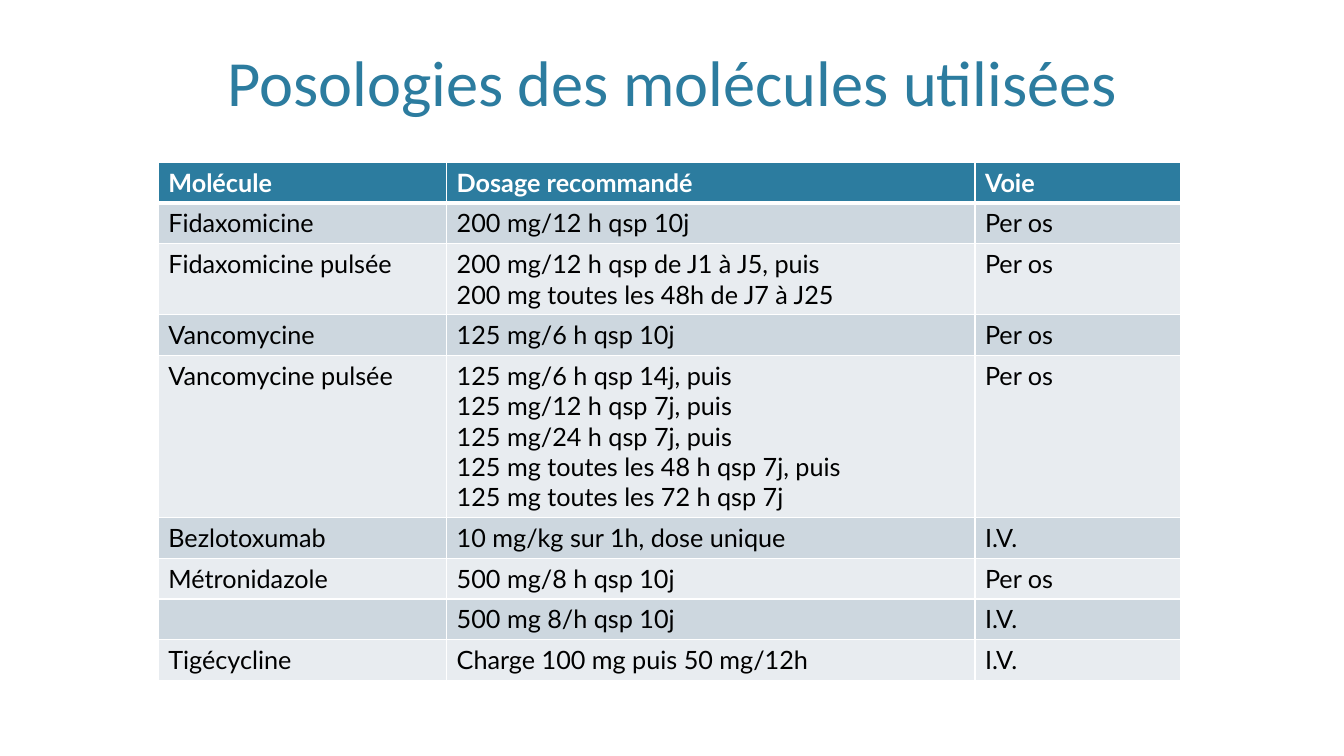
from lxml import etree
from pptx import Presentation
from pptx.dml.color import RGBColor
from pptx.enum.text import MSO_ANCHOR, PP_ALIGN
from pptx.oxml.ns import qn
from pptx.util import Inches, Pt

CENTER = PP_ALIGN.CENTER
BOTTOM = MSO_ANCHOR.BOTTOM
BLUE = "2C7C9F"
WHITE = "FFFFFF"
BANDS = ["E8ECF0", "CDD7DF"]


def color(value):
    return RGBColor.from_string(value)


def set_borders(cell, top, bottom):
    properties = cell._tc.get_or_add_tcPr()
    widths = {"a:lnL": 1, "a:lnR": 1, "a:lnT": top, "a:lnB": bottom}
    for position, (tag, width) in enumerate(widths.items()):
        line = etree.Element(qn(tag), w=str(Pt(width)))
        fill = etree.SubElement(line, qn("a:solidFill"))
        etree.SubElement(fill, qn("a:srgbClr"), val=WHITE)
        properties.insert(position, line)


rows = [
    ("Molécule", "Dosage recommandé", "Voie"),
    ("Fidaxomicine", "200 mg/12 h qsp 10j", "Per os"),
    ("Fidaxomicine pulsée",
     "200 mg/12 h qsp de J1 à J5, puis\n200 mg toutes les 48h de J7 à J25", "Per os"),
    ("Vancomycine", "125 mg/6 h qsp 10j", "Per os"),
    ("Vancomycine pulsée",
     "125 mg/6 h qsp 14j, puis\n125 mg/12 h qsp 7j, puis\n125 mg/24 h qsp 7j, puis\n"
     "125 mg toutes les 48 h qsp 7j, puis\n125 mg toutes les 72 h qsp 7j", "Per os"),
    ("Bezlotoxumab", "10 mg/kg sur 1h, dose unique", "I.V."),
    ("Métronidazole", "500 mg/8 h qsp 10j", "Per os"),
    ("", "500 mg 8/h qsp 10j", "I.V."),
    ("Tigécycline", "Charge 100 mg puis 50 mg/12h", "I.V."),
]

deck = Presentation()
deck.slide_width = Inches(13.33)
deck.slide_height = Inches(7.5)
page = deck.slides.add_slide(deck.slide_layouts[6])

title = page.shapes.add_textbox(Inches(0.8), Inches(0.12), Inches(11.73), Inches(1.11))
title.text_frame.word_wrap = True
title.text_frame.vertical_anchor = BOTTOM
para = title.text_frame.paragraphs[0]
para.alignment = CENTER
span = para.add_run()
span.text = "Posologies des molécules utilisées"
span.font.name = "Calibri"
span.font.size = Pt(46)
span.font.color.rgb = color(BLUE)

table = page.shapes.add_table(
    len(rows), 3, Inches(1.57), Inches(1.61), Inches(10.14), Inches(5.14)).table
for column, width in zip(table.columns, [2.86, 5.24, 2.04]):
    column.width = Inches(width)

for row_index, row in enumerate(rows):
    header = row_index == 0
    line_count = max(len(text.split("\n")) for text in row)
    table.rows[row_index].height = Inches(0.105 + 0.3 * line_count)
    for column_index, text in enumerate(row):
        cell = table.cell(row_index, column_index)
        cell.fill.solid()
        cell.fill.fore_color.rgb = color(BLUE if header else BANDS[row_index % 2])
        set_borders(cell, 3 if row_index == 1 else 1, 3 if header else 1)
        for line_index, line in enumerate(text.split("\n")):
            frame = cell.text_frame
            para = frame.add_paragraph() if line_index else frame.paragraphs[0]
            para.font.size = Pt(18)
            if line:
                span = para.add_run()
                span.text = line
                span.font.name = "Lato"
                span.font.size = Pt(18)
                span.font.bold = header
                span.font.color.rgb = color(WHITE if header else "000000")

deck.save("out.pptx")
